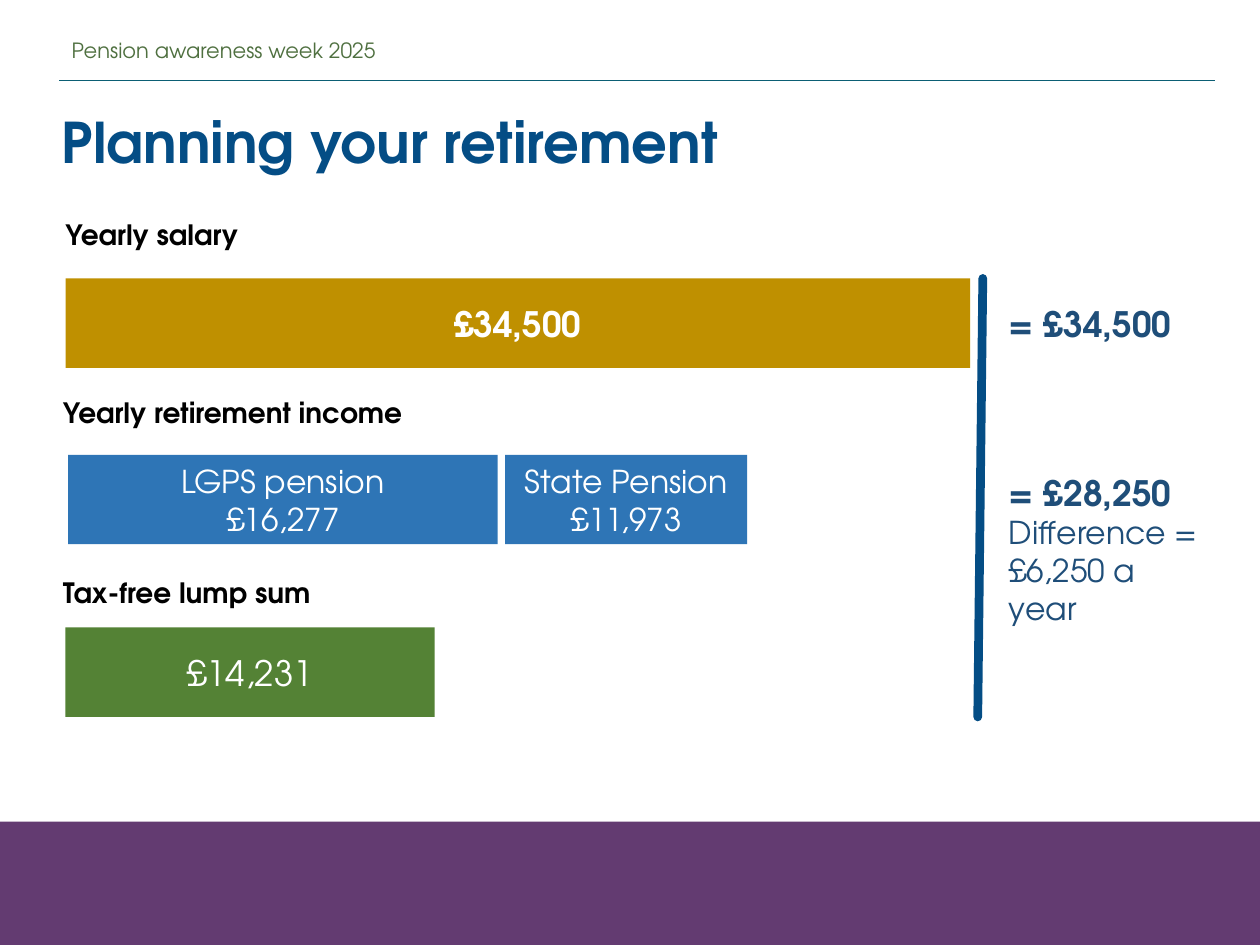
from pptx import Presentation
from pptx.dml.color import RGBColor
from pptx.enum.shapes import MSO_CONNECTOR, MSO_SHAPE
from pptx.enum.text import MSO_ANCHOR, MSO_AUTO_SIZE, PP_ALIGN
from pptx.oxml.ns import qn
from pptx.util import Inches, Pt
from lxml.etree import SubElement

FONT = "TeX Gyre Adventor"
WHITE = RGBColor(0xFF, 0xFF, 0xFF)
BLACK = RGBColor(0, 0, 0)
PURPLE = RGBColor(0x63, 0x3B, 0x71)
TEAL = RGBColor(0x0B, 0x5E, 0x74)
HEADER_GREEN = RGBColor(0x4F, 0x70, 0x40)
TITLE_BLUE = RGBColor(0x04, 0x4D, 0x85)
TOTAL_BLUE = RGBColor(0x1F, 0x4E, 0x79)
GOLD = RGBColor(0xBF, 0x90, 0x00)
BLUE = RGBColor(0x2E, 0x75, 0xB6)
GREEN = RGBColor(0x54, 0x82, 0x35)

BAR_HEIGHT = 0.71


def write(frame, lines, color, align=PP_ALIGN.LEFT, anchor=MSO_ANCHOR.TOP):
    """Fill a text frame with (text, size, bold) lines."""
    frame.word_wrap = True
    frame.auto_size = MSO_AUTO_SIZE.NONE
    frame.vertical_anchor = anchor
    for index, (text, size, bold) in enumerate(lines):
        paragraph = frame.add_paragraph() if index else frame.paragraphs[0]
        paragraph.text = text
        paragraph.alignment = align
        font = paragraph.font
        font.name, font.size, font.bold = FONT, Pt(size), bold
        font.color.rgb = color


def add_text(slide, box, lines, color, **layout):
    textbox = slide.shapes.add_textbox(*map(Inches, box))
    write(textbox.text_frame, lines, color, **layout)
    return textbox


def add_block(slide, box, color):
    block = slide.shapes.add_shape(MSO_SHAPE.RECTANGLE, *map(Inches, box))
    block.shadow.inherit = False
    block.fill.solid()
    block.fill.fore_color.rgb = color
    block.line.fill.background()
    return block


def add_rule(slide, start, end, color, width, round_ends=False):
    rule = slide.shapes.add_connector(
        MSO_CONNECTOR.STRAIGHT, *map(Inches, (*start, *end)))
    rule.line.color.rgb = color
    rule.line.width = Pt(width)
    if round_ends:
        rule.line._get_or_add_ln().set("cap", "rnd")
    SubElement(rule._element.spPr, qn("a:effectLst"))


def add_header(slide, left, top, width):
    add_text(slide, (left, top, 6.51, 0.25),
             [("Pension awareness week 2025", 12, False)], HEADER_GREEN,
             anchor=MSO_ANCHOR.MIDDLE)
    rule_top = top + 0.37
    add_rule(slide, (left, rule_top), (left + width, rule_top), TEAL, 0.5)


def add_title(slide, left, top, width, height):
    title = slide.shapes.title
    title.left, title.top, title.width, title.height = map(
        Inches, (left, top, width, height))
    write(title.text_frame, [("Planning your retirement", 32, True)], TITLE_BLUE)


def add_income_row(slide, label_box, label, bar_top, bars):
    """Place a heading and its bars, each (left, width, color, lines)."""
    add_text(slide, label_box, [(label, 16, True)], BLACK)
    for left, width, color, lines in bars:
        bar = add_block(slide, (left, bar_top, width, BAR_HEIGHT), color)
        write(bar.text_frame, lines, WHITE, PP_ALIGN.CENTER, MSO_ANCHOR.MIDDLE)


def add_totals(slide, left, top, bottom):
    # Divider between the bars and their totals
    add_rule(slide, (left - 0.11, top), (left - 0.15, bottom), TITLE_BLUE, 5,
             round_ends=True)
    add_text(slide, (left, top + 0.14, 1.57, 0.44),
             [("= £34,500", 20, True)], TOTAL_BLUE)
    add_text(slide, (left, top + 1.48, 1.8, 1.04),
             [("= £28,250", 20, True),
              ("Difference = £6,250 a year", 18, False)], TOTAL_BLUE)


def main():
    prs = Presentation()
    prs.slide_width, prs.slide_height = Inches(10), Inches(7.5)
    slide = prs.slides.add_slide(prs.slide_layouts[5])

    # Footer band
    add_block(slide, (0, 6.52, 10, 0.98), PURPLE)

    add_header(slide, 0.47, 0.27, 9.17)
    add_title(slide, 0.39, 0.8, 9.33, 0.64)

    # Salary, income and lump sum, with bar widths showing the amounts
    add_income_row(slide, (0.42, 1.68, 1.89, 0.37), "Yearly salary", 2.21,
                   [(0.52, 7.18, GOLD, [("£34,500", 20, True)])])
    add_income_row(slide, (0.4, 3.09, 3.72, 0.37), "Yearly retirement income", 3.61,
                   [(0.54, 3.41, BLUE,
                     [("LGPS pension", 18, False), ("£16,277", 18, False)]),
                    (4.01, 1.92, BLUE,
                     [("State Pension", 18, False), ("£11,973", 18, False)])])
    add_income_row(slide, (0.4, 4.52, 2.62, 0.37), "Tax-free lump sum", 4.98,
                   [(0.52, 2.93, GREEN, [("£14,231", 20, False)])])

    add_totals(slide, 7.91, 2.21, 5.69)
    prs.save("out.pptx")


if __name__ == "__main__":
    main()
